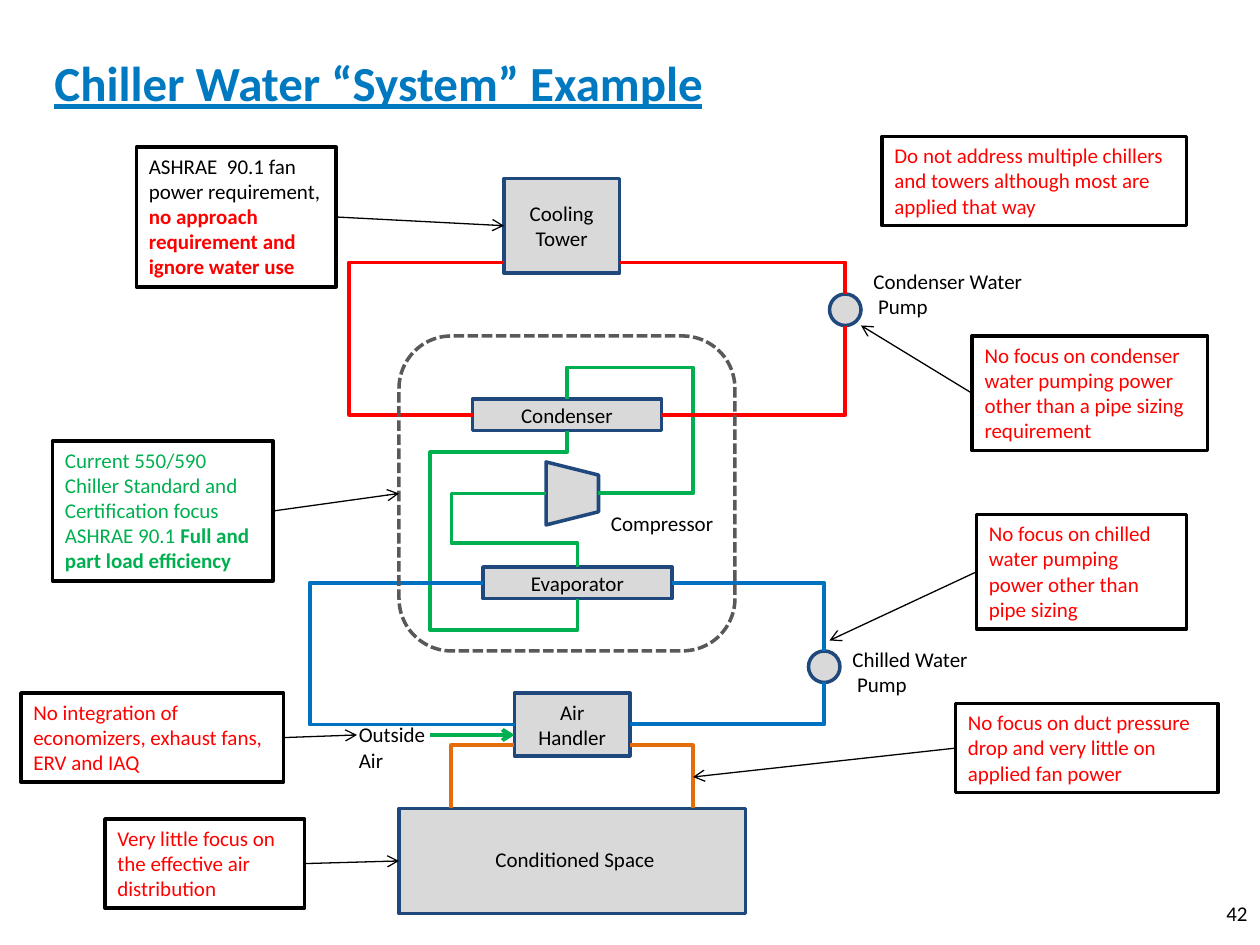
from dataclasses import dataclass

from lxml.etree import SubElement
from pptx import Presentation
from pptx.dml.color import RGBColor
from pptx.enum.dml import MSO_LINE as Dash
from pptx.enum.shapes import MSO_CONNECTOR as Connector, MSO_SHAPE as Preset
from pptx.enum.text import MSO_ANCHOR as Anchor, MSO_AUTO_SIZE as AutoSize, PP_ALIGN as Align
from pptx.oxml.ns import qn
from pptx.util import Pt


@dataclass(frozen=True)
class Theme:
    font: str = "Calibri"
    title_size: float = 28
    body_size: float = 12
    outline: float = 2
    pipe: float = 2.25
    arrow: float = 0.75
    title: str = "0079C1"
    black: str = "000000"
    white: str = "FFFFFF"
    equipment: str = "D9D9D9"
    equipment_line: str = "1F497D"
    boundary: str = "595959"
    red: str = "FF0000"
    green: str = "00B050"
    blue: str = "0070C0"
    orange: str = "E46C0A"


THEME = Theme()

# Equipment: preset, left, top, width, height, rotation, text
EQUIPMENT = [
    (Preset.RECTANGLE, 288, 102, 66, 54, 0, "Cooling Tower"),
    (Preset.RECTANGLE, 270, 228, 108, 18, 0, "Condenser"),
    (Preset.RECTANGLE, 276, 324, 108, 18, 0, "Evaporator"),
    (Preset.TRAPEZOID, 309, 267, 36, 30, 90, ""),
    (Preset.OVAL, 474, 168, 18, 18, 0, ""),
    (Preset.OVAL, 462, 372, 18, 18, 0, ""),
    (Preset.RECTANGLE, 294, 396, 66, 36, 0, "Air Handler"),
    (Preset.RECTANGLE, 228, 462, 198, 60, 0, ""),
]
CHILLER_BOUNDARY = (228, 192, 192, 180)

# Pipes: corner points by circuit
PIPES = {
    THEME.green: [  # refrigerant
        [(342, 282), (396, 282), (396, 210), (324, 210), (324, 228)],
        [(324, 246), (324, 258.5), (246, 258.5), (246, 360), (330, 360), (330, 342)],
        [(330, 324), (330, 310.5), (258, 310.5), (258, 282), (312, 282)],
    ],
    THEME.red: [  # condenser water
        [(378, 237), (483, 237), (483, 186)],
        [(483, 168), (483, 150), (354, 150)],
        [(270, 237), (199.5, 237), (199.5, 150), (288, 150)],
    ],
    THEME.blue: [  # chilled water
        [(276, 333), (177, 333), (177, 414), (294, 414)],
        [(360, 414), (471, 414), (471, 390)],
        [(471, 372), (471, 333), (384, 333)],
    ],
    THEME.orange: [  # air ducts
        [(294, 426), (258, 426), (258, 462)],
        [(360, 426), (396, 426), (396, 462)],
    ],
}
OUTSIDE_AIR = ((246, 420), (294, 420))

# Labels: left, top, width, height, paragraphs
LABELS = [
    (492, 150, 100, 36, "Condenser Water\v Pump"),
    (342, 288, 73.5, 21.8, "Compressor"),
    (480, 366, 82, 36, "Chilled Water\v Pump"),
    (276, 480, 106.5, 21.8, "Conditioned Space"),
    (198, 409, 52.5, 36, "Outside\nAir"),
]

# Callouts: left, top, width, height, arrow target, paragraphs of (text, colour, bold)
CALLOUTS = [
    (30, 252, 126, 80, (228, 282), [
        [("Current 550/590 Chiller Standard and Certification focus", THEME.green, False)],
        [("ASHRAE 90.1 ", THEME.green, False),
         ("Full and part load efficiency", THEME.green, True)]]),
    (78, 84, 114, 80, (288, 129), [
        [("ASHRAE  90.1 fan power requirement, ", THEME.black, False),
         ("no approach requirement and ignore water use", THEME.red, True)]]),
    (555.5, 192, 134.5, 65.5, (492, 186), [[(
        "No focus on condenser water pumping power other than a pipe sizing requirement",
        THEME.red, False)]]),
    (558, 294, 120, 65.5, (474, 366), [[(
        "No focus on chilled water pumping power other than pipe sizing", THEME.red, False)]]),
    (546, 402, 150, 51, (396, 444), [[(
        "No focus on duct pressure drop and very little on applied fan power",
        THEME.red, False)]]),
    (60, 468, 114, 51, (228, 492), [[(
        "Very little focus on the effective air distribution", THEME.red, False)]]),
    (504, 78, 174, 51, None, [[(
        "Do not address multiple chillers and towers although most are applied that way",
        THEME.red, False)]]),
    (12, 396, 150, 51, (204, 420), [[(
        "No integration of economizers, exhaust fans, ERV and IAQ", THEME.red, False)]]),
]


def style_font(font, color=THEME.black, size=THEME.body_size, bold=False):
    font.name, font.size, font.bold = THEME.font, Pt(size), bold
    font.color.rgb = RGBColor.from_string(color)


def style_line(line, color, width):
    line.color.rgb = RGBColor.from_string(color)
    line.width = Pt(width)


def add_text(slide, box, text, align=Align.LEFT, anchor=Anchor.TOP, wrap=True, **font):
    frame = slide.shapes.add_textbox(*map(Pt, box)).text_frame
    frame.text = text
    frame.word_wrap, frame.vertical_anchor = wrap, anchor
    for paragraph in frame.paragraphs:
        paragraph.alignment = align
        for run in paragraph.runs:
            style_font(run.font, **font)
    return frame


def add_box(slide, preset, box, fill, line_color):
    shape = slide.shapes.add_shape(preset, *map(Pt, box))
    shape.shadow.inherit = False
    if fill:
        shape.fill.solid()
        shape.fill.fore_color.rgb = RGBColor.from_string(fill)
    else:
        shape.fill.background()
    style_line(shape.line, line_color, THEME.outline)
    return shape


def add_line(slide, start, end, color, width, kind=Connector.STRAIGHT, arrow=False):
    connector = slide.shapes.add_connector(kind, *map(Pt, (*start, *end)))
    style_line(connector.line, color, width)
    if arrow:
        SubElement(connector.line._get_or_add_ln(), qn("a:tailEnd"), type="arrow")
    SubElement(connector._element.spPr, qn("a:effectLst"))
    return connector


def add_pipe(slide, points, color):
    """Route one elbow connector; its adjustments are corner offsets over the span."""
    start, *corners, end = points
    span = [end[0] - start[0], end[1] - start[1]]
    first_axis = 0 if corners[0][1] == start[1] else 1
    connector = add_line(slide, start, end, color, THEME.pipe, Connector.ELBOW)
    properties = connector._element.spPr
    transform = properties.find(qn("a:xfrm"))
    if first_axis == 1:  # a vertical start is a horizontal one turned by 90 degrees
        width, height = abs(span[1]), abs(span[0])
        connector.left = Pt((start[0] + end[0] - width) / 2)
        connector.top = Pt((start[1] + end[1] - height) / 2)
        connector.width, connector.height = Pt(width), Pt(height)
        transform.set("rot", str(90 * 60000))
        transform.set("flipH", str(int(span[1] < 0)))
        transform.set("flipV", str(int(span[0] > 0)))
    geometry = properties.find(qn("a:prstGeom"))
    geometry.set("prst", f"bentConnector{len(corners) + 1}")
    for index, corner in enumerate(corners[:-1]):
        axis = (first_axis + index) % 2
        ratio = (corner[axis] - start[axis]) / span[axis]
        SubElement(geometry.find(qn("a:avLst")), qn("a:gd"),
                   name=f"adj{index + 1}", fmla=f"val {round(ratio * 100000)}")


def add_callout(slide, left, top, width, height, target, paragraphs):
    shape = add_box(slide, Preset.RECTANGLE, (left, top, width, height), THEME.white, THEME.black)
    frame = shape.text_frame
    frame.word_wrap, frame.auto_size = True, AutoSize.SHAPE_TO_FIT_TEXT
    frame.vertical_anchor = Anchor.TOP
    for index, runs in enumerate(paragraphs):
        paragraph = frame.add_paragraph() if index else frame.paragraphs[0]
        paragraph.alignment = Align.LEFT
        for text, color, bold in runs:
            run = paragraph.add_run()
            run.text = text
            style_font(run.font, color, bold=bold)
    if target:
        side = left if target[0] < left else left + width
        add_line(slide, (side, top + height / 2), target, THEME.black, THEME.arrow, arrow=True)


def main():
    presentation = Presentation()
    presentation.slide_width, presentation.slide_height = Pt(720), Pt(540)
    slide = presentation.slides.add_slide(presentation.slide_layouts[6])

    # Title and page number
    title = add_text(slide, (24, 21.6, 672, 50.4), "Chiller Water “System” Example",
                     anchor=Anchor.MIDDLE, color=THEME.title, size=THEME.title_size, bold=True)
    title.paragraphs[0].runs[0].font.underline = True
    add_text(slide, (672, 504, 48, 36), "42", Align.RIGHT, Anchor.MIDDLE)

    # Equipment
    for preset, *box, rotation, text in EQUIPMENT:
        shape = add_box(slide, preset, box, THEME.equipment, THEME.equipment_line)
        shape.rotation = rotation
        if text:
            shape.text_frame.text = text
            paragraph = shape.text_frame.paragraphs[0]
            paragraph.alignment = Align.CENTER
            style_font(paragraph.runs[0].font)

    # Pipes and ducts
    for color, routes in PIPES.items():
        for points in routes:
            add_pipe(slide, points, color)
    add_line(slide, *OUTSIDE_AIR, THEME.green, THEME.pipe, arrow=True)

    # Chiller boundary, labels and callouts
    boundary = add_box(slide, Preset.ROUNDED_RECTANGLE, CHILLER_BOUNDARY, None, THEME.boundary)
    boundary.line.dash_style = Dash.SQUARE_DOT
    for *box, text in LABELS:
        add_text(slide, box, text, wrap=False)
    for callout in CALLOUTS:
        add_callout(slide, *callout)

    presentation.save("out.pptx")


if __name__ == "__main__":
    main()
